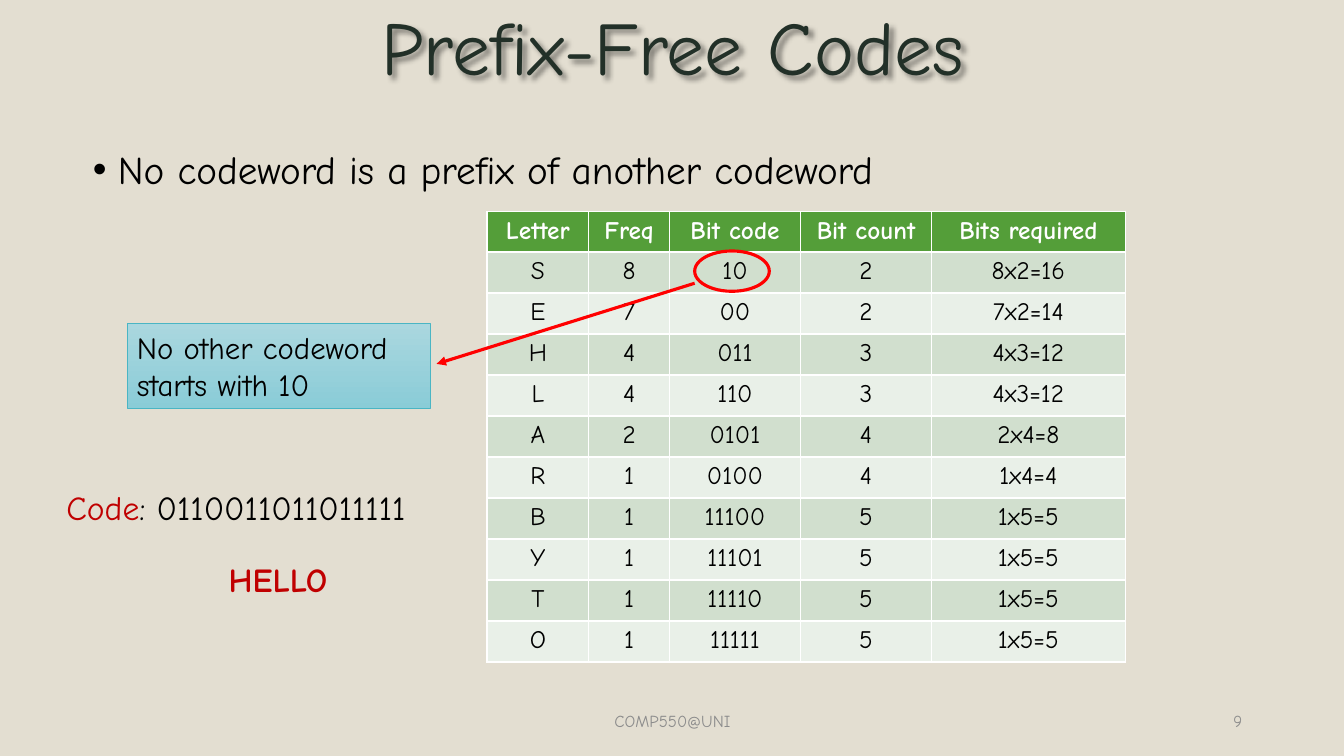
from dataclasses import dataclass

from lxml import etree
from pptx import Presentation
from pptx.dml.color import RGBColor
from pptx.enum.shapes import MSO_CONNECTOR, MSO_SHAPE
from pptx.enum.text import MSO_ANCHOR, MSO_AUTO_SIZE, PP_ALIGN
from pptx.oxml import parse_xml
from pptx.oxml.ns import nsdecls, qn
from pptx.util import Inches, Pt

LEFT, CENTER, RIGHT = PP_ALIGN.LEFT, PP_ALIGN.CENTER, PP_ALIGN.RIGHT
TOP, MIDDLE = MSO_ANCHOR.TOP, MSO_ANCHOR.MIDDLE
NO_AUTOFIT = MSO_AUTO_SIZE.NONE
ELLIPSE, RECTANGLE = MSO_SHAPE.OVAL, MSO_SHAPE.RECTANGLE
STRAIGHT = MSO_CONNECTOR.STRAIGHT


@dataclass(frozen=True)
class Theme:
    """Font, colours and type sizes of the slide."""
    font: str = "Comic Neue"
    background: str = "E3DED1"
    heading: str = "223028"
    ink: str = "000000"
    white: str = "FFFFFF"
    muted: str = "8C8C8C"
    accent: str = "C00000"
    marker: str = "FF0000"
    header_fill: str = "549E39"
    bands: tuple = ("D1DFCE", "E9F0E8")
    note_gradient: tuple = ("AAD7DF", "8ACCD7")
    note_line: str = "4AB5C4"
    title_size: int = 54
    body_size: int = 28
    code_size: int = 24
    note_size: int = 22
    table_size: int = 18
    footer_size: int = 12


THEME = Theme()
HEADERS = ("Letter", "Freq", "Bit code", "Bit count", "Bits required")
COLUMN_WIDTHS = (1.01, 0.8, 1.3, 1.3, 1.92)
CODES = (
    ("S", 8, "10"), ("E", 7, "00"), ("H", 4, "011"), ("L", 4, "110"),
    ("A", 2, "0101"), ("R", 1, "0100"), ("B", 1, "11100"),
    ("Y", 1, "11101"), ("T", 1, "11110"), ("O", 1, "11111"),
)


def rgb(value):
    """Return a colour from its hex value."""
    return RGBColor.from_string(value)


def inches(*lengths):
    """Return the lengths in slide units."""
    return [Inches(length) for length in lengths]


def place(shape, box):
    """Move a shape to left, top, width and height."""
    for side, length in zip(("left", "top", "width", "height"), inches(*box)):
        setattr(shape, side, length)


def write(frame, runs, size, align=LEFT, anchor=TOP, bold=False):
    """Fill a text frame with one paragraph of (text, colour) runs."""
    for name, value in {"word_wrap": True, "vertical_anchor": anchor}.items():
        setattr(frame, name, value)
    paragraph = frame.paragraphs[0]
    paragraph.alignment = align
    font_format = {"name": THEME.font, "size": Pt(size), "bold": bold}
    for text, color in runs:
        run = paragraph.add_run()
        run.text = text
        for name, value in font_format.items():
            setattr(run.font, name, value)
        run.font.color.rgb = rgb(color)
    return paragraph


def add_label(slide, box, runs, size, **text_format):
    """Add a text box."""
    label = slide.shapes.add_textbox(*inches(*box))
    write(label.text_frame, runs, size, **text_format)


def add_title(slide, text):
    """Write the title with a soft shadow."""
    title = slide.shapes.title
    place(title, (0.92, 0, 11.5, 1.02))
    title.text_frame.auto_size = NO_AUTOFIT
    heading = write(title.text_frame, [(text, THEME.heading)],
                    THEME.title_size, CENTER, MIDDLE)
    heading.line_spacing = 0.9
    title._element.spPr.append(parse_xml(
        f'<a:effectLst {nsdecls("a")}><a:outerShdw blurRad="38100" '
        'dist="38100" dir="2700000" algn="tl"><a:srgbClr val="000000">'
        '<a:alpha val="43000"/></a:srgbClr></a:outerShdw></a:effectLst>'))


def add_statement(slide, text):
    """Write the bulleted statement in the body placeholder."""
    body = slide.placeholders[1]
    place(body, (0.82, 1.16, 11.7, 0.84))
    body.text_frame.auto_size = NO_AUTOFIT
    statement = write(body.text_frame, [(text, THEME.ink)], THEME.body_size)
    for name, value in {"line_spacing": 1.5, "space_before": Pt(10)}.items():
        setattr(statement, name, value)
    properties = statement._p.get_or_add_pPr()
    properties.set("marL", str(Inches(0.25)))
    properties.set("indent", str(Inches(-0.25)))
    etree.SubElement(properties, qn("a:buFont")).set("typeface", "Arial")
    etree.SubElement(properties, qn("a:buChar")).set("char", "•")


def add_code_table(slide, box, header_height):
    """Add the code table, deriving bit counts and totals from the codes."""
    rows = [HEADERS]
    for letter, freq, code in CODES:
        bits = len(code)
        rows.append((letter, freq, code, bits, f"{freq}x{bits}={freq * bits}"))
    table = slide.shapes.add_table(
        len(rows), len(HEADERS), *inches(*box)).table
    for column, width in zip(table.columns, COLUMN_WIDTHS):
        column.width = Inches(width)
    row_height = (box[3] - header_height) / len(CODES)
    for index, values in enumerate(rows):
        is_header = index == 0
        table.rows[index].height = Inches(
            header_height if is_header else row_height)
        fill = THEME.header_fill if is_header else THEME.bands[(index - 1) % 2]
        color = THEME.white if is_header else THEME.ink
        for cell, value in zip(table.rows[index].cells, values):
            cell.fill.solid()
            cell.fill.fore_color.rgb = rgb(fill)
            write(cell.text_frame, [(str(value), color)], THEME.table_size,
                  CENTER, bold=is_header)


def add_outlined(slide, kind, box, color, width):
    """Add an outlined shape without shadow."""
    shape = slide.shapes.add_shape(kind, *inches(*box))
    shape.shadow.inherit = False
    shape.line.color.rgb = rgb(color)
    shape.line.width = Pt(width)
    return shape


def add_note(slide, box, text):
    """Add the note with its gradient fill."""
    note = add_outlined(slide, RECTANGLE, box, THEME.note_line, 0.5)
    note.fill.gradient()
    note.fill.gradient_angle = 270
    for stop, color in zip(note.fill.gradient_stops, THEME.note_gradient):
        stop.color.rgb = rgb(color)
    write(note.text_frame, [(text, THEME.ink)], THEME.note_size)


def add_arrow(slide, start, end):
    """Add an arrow from start to end."""
    arrow = slide.shapes.add_connector(STRAIGHT, *inches(*start, *end))
    arrow.line.color.rgb = rgb(THEME.marker)
    arrow.line.width = Pt(2.25)
    etree.SubElement(arrow.line._get_or_add_ln(),
                     qn("a:tailEnd")).set("type", "triangle")
    etree.SubElement(arrow._element.spPr, qn("a:effectLst"))


def main():
    """Build and save the slide."""
    deck = Presentation()
    deck.slide_width, deck.slide_height = inches(13.33, 7.5)
    slide = deck.slides.add_slide(deck.slide_layouts[1])
    slide.background.fill.solid()
    slide.background.fill.fore_color.rgb = rgb(THEME.background)

    add_title(slide, "Prefix-Free Codes")
    add_statement(slide, "No codeword is a prefix of another codeword")
    add_label(slide, (9.42, 6.95, 3, 0.4), [("9", THEME.muted)],
              THEME.footer_size, align=RIGHT, anchor=MIDDLE)
    add_label(slide, (4.42, 6.95, 4.5, 0.4), [("COMP550@UNI", THEME.muted)],
              THEME.footer_size, align=CENTER, anchor=MIDDLE)
    add_code_table(slide, (4.83, 2.1, 6.33, 4.46), 0.39)
    code_ring = add_outlined(slide, ELLIPSE, (6.89, 2.49, 0.74, 0.4),
                             THEME.marker, 2.25)
    code_ring.fill.background()
    add_note(slide, (1.26, 3.21, 3.01, 0.84),
             "No other codeword starts with 10")
    add_arrow(slide, (6.89, 2.81), (4.33, 3.61))
    add_label(slide, (0.56, 4.78, 3.86, 0.5),
              [("Code", THEME.accent), (": 0110011011011111", THEME.ink)],
              THEME.code_size)
    add_label(slide, (2.17, 5.5, 1.33, 0.5), [("HELLO", THEME.accent)],
              THEME.code_size, bold=True)
    deck.save("out.pptx")


if __name__ == "__main__":
    main()
